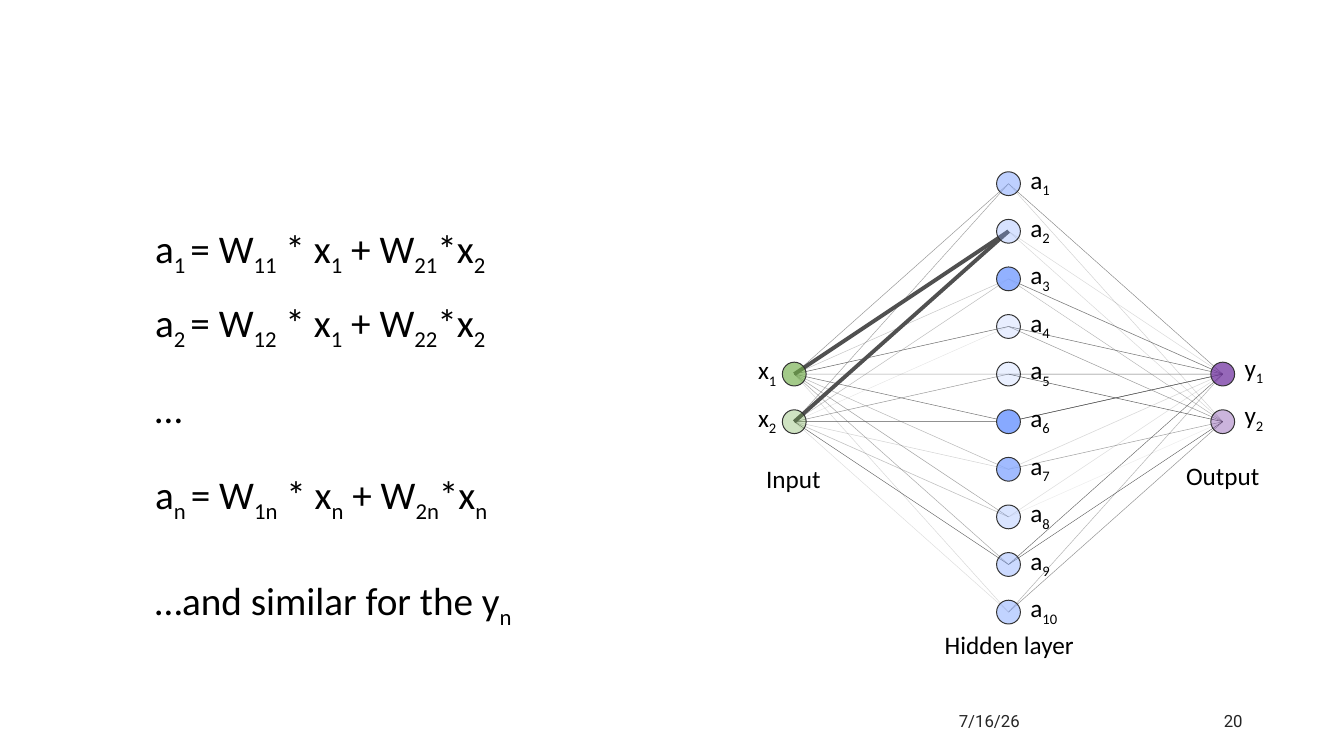
from dataclasses import dataclass
from itertools import product

from lxml.etree import SubElement
from pptx import Presentation
from pptx.dml.color import RGBColor as Rgb
from pptx.enum.shapes import MSO_CONNECTOR as Connector, MSO_SHAPE as Preset
from pptx.enum.text import MSO_ANCHOR as Anchor, PP_ALIGN as Align
from pptx.oxml.ns import qn
from pptx.util import Inches, Pt


@dataclass(frozen=True)
class Theme:
    """Colours, fonts and sizes of the slide."""
    ink: Rgb = Rgb(0, 0, 0)
    footer_ink: Rgb = Rgb(0x26, 0x26, 0x26)
    edge: Rgb = Rgb(0x50, 0x50, 0x50)
    outline: Rgb = Rgb(0x33, 0x33, 0x33)
    input: Rgb = Rgb(0x70, 0xAD, 0x47)
    hidden: Rgb = Rgb(0x87, 0xA9, 0xFF)
    output: Rgb = Rgb(0x70, 0x30, 0xA0)
    body_font: str = "Calibri"
    footer_font: str = "Roboto"
    equation_size: float = 28
    label_size: float = 18
    footer_size: float = 12
    thin: float = 0.35
    strong: float = 2.75
    ring: float = 0.71


@dataclass(frozen=True)
class Layer:
    """One column of neurons with its labels and caption, measured in rows."""
    letter: str
    colour: Rgb
    opacities: tuple
    first_row: int
    label_shift: float
    label_lift: float
    caption: str
    caption_shift: float
    caption_row: float


THEME = Theme()
WIDTH, HEIGHT = Inches(13.33), Inches(7.5)
EQUATION_FORMAT = {"name": THEME.body_font, "size": Pt(THEME.equation_size)}
LABEL_FORMAT = {"name": THEME.body_font, "size": Pt(THEME.label_size)}
FOOTER_FORMAT = {"name": THEME.footer_font, "size": Pt(THEME.footer_size)}

LAYERS = (
    Layer("x", THEME.input, (64, 33), 4, -0.97, 0.51, "Input", -0.8, 5.76),
    Layer("a", THEME.hidden, (54, 33, 90, 19, 17, 100, 78, 31, 42, 51), 0, 0.25, 0.51,
          "Hidden layer", -1.55, 9.25),
    Layer("y", THEME.output, (73, 36), 4, 0.25, 0.57, "Output", -0.98, 5.7),
)
INPUT_WEIGHTS = (
    (41, 100, 33, 89, 54, 81, 41, 55, 50, 21),
    (53, 100, 38, 12, 60, 96, 25, 42, 81, 18),
)
OUTPUT_WEIGHTS = ((64, 26), (21, 22), (87, 40), (81, 58), (86, 94),
                  (83, 0), (25, 54), (20, 10), (80, 92), (44, 62))
EQUATIONS = (
    (0, "a_1 _= W_11_ * x_1_ + W_21_*x_2"),
    (0.18, "a_2 _= W_12_ * x_1_ + W_22_*x_2"),
    (0.39, "…"),
    (0.6, "a_n _= W_1n_ * x_n_ + W_2n_*x_n"),
    (0.86, "…and similar for the y_n"),
)


def region(left, top, width, height):
    """Turn percentages of the slide into a box."""
    return (left * WIDTH / 100, top * HEIGHT / 100,
            width * WIDTH / 100, height * HEIGHT / 100)


def set_format(target, values):
    """Set each named attribute on the target."""
    for name, value in values.items():
        setattr(target, name, value)


def set_opacity(shape, percent):
    """Make the first colour of a shape partly transparent."""
    colour = next(shape.element.iter(qn("a:srgbClr")))
    SubElement(colour, qn("a:alpha")).set("val", str(percent * 1000))


def add_text(slide, box, marked, font, ink=THEME.ink, align=Align.LEFT, anchor=Anchor.TOP):
    """Write one line of text whose subscripts stand between underscores."""
    frame = slide.shapes.add_textbox(*map(int, box)).text_frame
    set_format(frame, {"word_wrap": True, "vertical_anchor": anchor})
    paragraph = frame.paragraphs[0]
    paragraph.alignment = align
    for index, part in enumerate(marked.split("_")):
        run = paragraph.add_run()
        run.text = part
        set_format(run.font, font)
        run.font.color.rgb = ink
        if index % 2:
            run.font._element.set("baseline", "-25000")


def add_edge(slide, start, end, opacity, ink):
    """Draw one weight, with full opacity standing for an emphasised one."""
    edge = slide.shapes.add_connector(Connector.STRAIGHT, *map(int, start + end))
    edge.line.width = Pt(THEME.strong if opacity == 100 else THEME.thin)
    edge.line.color.rgb = ink
    set_opacity(edge, opacity)
    SubElement(edge.element.spPr, qn("a:effectLst"))


def add_neuron(slide, centre, diameter, colour, opacity):
    """Draw one neuron around its centre."""
    corner = [int(place - diameter / 2) for place in centre]
    neuron = slide.shapes.add_shape(Preset.OVAL, *corner, int(diameter), int(diameter))
    neuron.shadow.inherit = False
    neuron.fill.solid()
    neuron.fill.fore_color.rgb = colour
    set_opacity(neuron, opacity)
    neuron.line.color.rgb = THEME.outline
    neuron.line.width = Pt(THEME.ring)


def add_network(slide, box):
    """Draw the three layers, their weights and their labels."""
    left, top, width, height = box
    row = height / 9
    columns = [left + index * width / 2 for index in range(3)]
    inputs, hidden, outputs = centres = [
        [(x, top + (layer.first_row + index) * row) for index in range(len(layer.opacities))]
        for x, layer in zip(columns, LAYERS)]
    for starts, ends, weights in ((inputs, hidden, INPUT_WEIGHTS),
                                  (hidden, outputs, OUTPUT_WEIGHTS)):
        for i, j in product(range(len(starts)), range(len(ends))):
            first = starts is inputs and i == j == 0
            if weights[i][j]:
                add_edge(slide, starts[i], ends[j], weights[i][j],
                         THEME.ink if first else THEME.edge)
    add_edge(slide, hidden[5], outputs[0], OUTPUT_WEIGHTS[5][0], THEME.edge)
    for x, layer, places in zip(columns, LAYERS, centres):
        for number, (centre, opacity) in enumerate(zip(places, layer.opacities), 1):
            add_neuron(slide, centre, row / 2, layer.colour, opacity)
            label_box = (x + layer.label_shift * row, centre[1] - layer.label_lift * row,
                         1.1 * row, 0.85 * row)
            add_text(slide, label_box, f"{layer.letter}_{number}", LABEL_FORMAT)
        caption_box = (x + layer.caption_shift * row, top + layer.caption_row * row,
                       3.4 * row, 0.85 * row)
        add_text(slide, caption_box, layer.caption, LABEL_FORMAT)


def add_equations(slide, box):
    """Write the equations down the box."""
    left, top, width, height = box
    for share, equation in EQUATIONS:
        add_text(slide, (left, top + share * height, width, 0.14 * height),
                 equation, EQUATION_FORMAT)


def add_footer(slide, box):
    """Write the date and the slide number in the two halves of the box."""
    left, top, width, height = box
    for half, (text, align) in enumerate((("7/16/26", Align.LEFT), ("20", Align.RIGHT))):
        add_text(slide, (left + half * width / 2, top, width / 2, height), text,
                 FOOTER_FORMAT, THEME.footer_ink, align, Anchor.MIDDLE)


def main():
    """Build and save the slide."""
    deck = Presentation()
    set_format(deck, {"slide_width": WIDTH, "slide_height": HEIGHT})
    slide = deck.slides.add_slide(deck.slide_layouts[6])
    add_network(slide, region(59.1, 24.3, 31.88, 56.67))
    add_footer(slide, region(70.6, 92.67, 22.6, 5.33))
    add_equations(slide, region(10.8, 29.07, 42.45, 54.13))
    deck.save("out.pptx")


if __name__ == "__main__":
    main()
